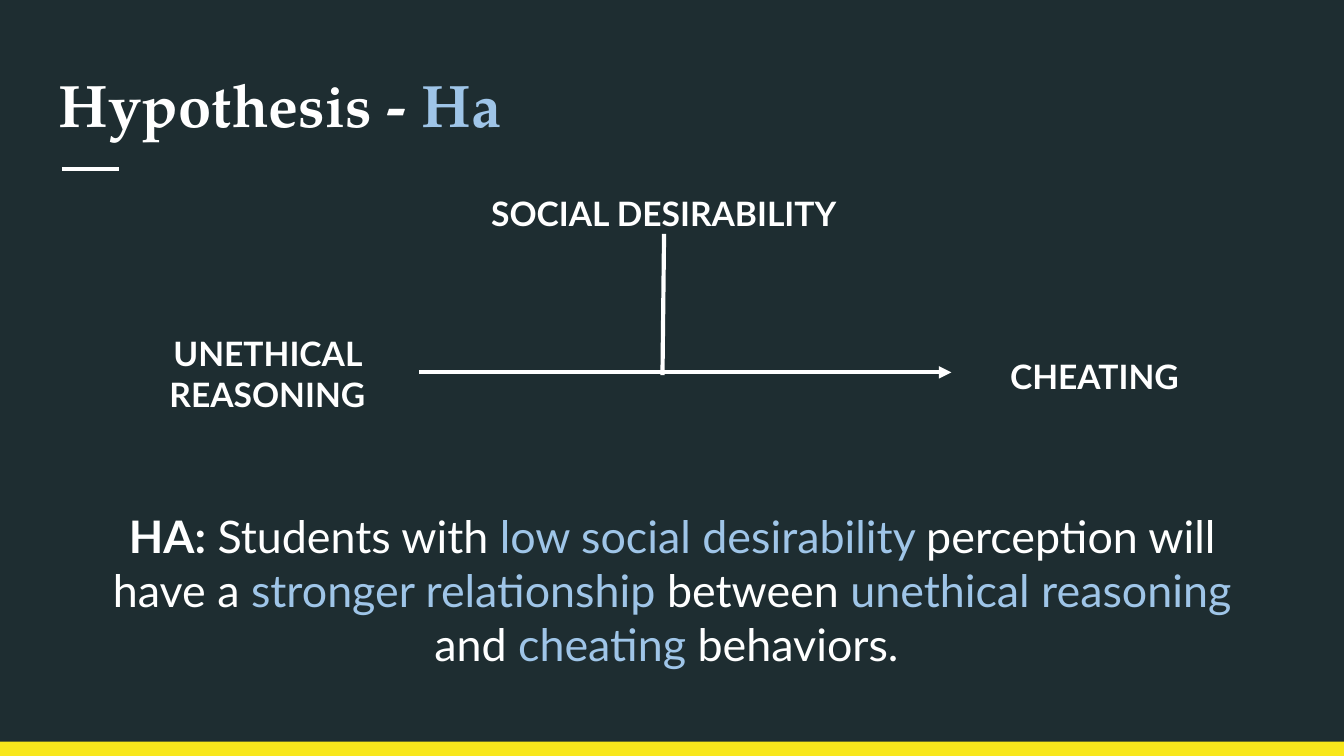
from lxml.etree import SubElement
from pptx import Presentation
from pptx.dml.color import RGBColor
from pptx.enum.shapes import MSO_CONNECTOR, MSO_SHAPE
from pptx.enum.text import PP_ALIGN
from pptx.oxml.ns import qn
from pptx.util import Cm, Pt

NIGHT, WHITE, SKY, YELLOW = "1E2D31", "FFFFFF", "9FC5E8", "F8E71C"
WIDTH, HEIGHT = 25.4, 14.29
LABEL = {"name": "Lato", "size": Pt(18), "bold": True}
STATEMENT = {"name": "Lato", "size": Pt(24), "bold": False}
HEADING = {"name": "TeX Gyre Pagella", "size": Pt(32), "bold": True}


def rgb(code):
    return RGBColor.from_string(code)


def add_text(slide, box, runs, style, **layout):
    frame = slide.shapes.add_textbox(*map(Cm, box)).text_frame
    frame.word_wrap = True
    for side in ("left", "top", "right", "bottom"):
        setattr(frame, f"margin_{side}", Cm(0.25))
    paragraph = frame.paragraphs[0]
    for key, value in layout.items():
        setattr(paragraph, key, value)
    for words, color, *changes in runs:
        run = paragraph.add_run()
        run.text = words
        for key, value in {**style, **dict(changes)}.items():
            setattr(run.font, key, value)
        run.font.color.rgb = rgb(color)


def add_line(slide, start, end, arrow=False):
    line = slide.shapes.add_connector(MSO_CONNECTOR.STRAIGHT, *map(Cm, start + end))
    line.line.color.rgb = rgb(WHITE)
    line.line.width = Pt(2.25)
    properties = line._element.spPr
    if arrow:
        SubElement(properties.find(qn("a:ln")), qn("a:tailEnd"), type="triangle")
    SubElement(properties, qn("a:effectLst"))


def add_footer_band(slide, box):
    band = slide.shapes.add_shape(MSO_SHAPE.RECTANGLE, *map(Cm, box))
    band.shadow.inherit = False
    band.fill.solid()
    band.fill.fore_color.rgb = rgb(YELLOW)
    band.line.fill.background()


def add_heading(slide, box):
    left, top, width, height = box
    rule_left, rule_top = left + 0.31, top + 2.16
    add_line(slide, (rule_left, rule_top), (rule_left + 1.07, rule_top))
    add_text(slide, box, [("Hypothesis - ", WHITE), ("Ha", SKY)], HEADING)


def add_moderation_diagram(slide, box):
    left, top, width, height = box
    effect_width, label_height = 5.41, 1.14
    effect_left = left + width - effect_width
    arrow_top = top + 3.76
    stem = left + 10.7
    labels = [
        ("SOCIAL DESIRABILITY", (left + 5.43, top, 10.57, label_height),
         {"line_spacing": 1.15, "space_after": Pt(16)}),
        ("UNETHICAL REASONING", (left, top + 2.77, 6.45, height - 2.77), {}),
        ("CHEATING", (effect_left, top + 3.2, effect_width, label_height), {}),
    ]
    for words, place, spacing in labels:
        add_text(slide, place, [(words, WHITE)], LABEL,
                 alignment=PP_ALIGN.CENTER, **spacing)
    add_line(slide, (left + 6.09, arrow_top), (effect_left, arrow_top), arrow=True)
    add_line(slide, (stem + 0.02, top + label_height), (stem - 0.01, arrow_top + 0.05))


def add_hypothesis(slide, box):
    runs = [
        ("HA:", WHITE, ("bold", True)),
        (" Students with ", WHITE),
        ("low social desirability ", SKY),
        ("perception will have a ", WHITE),
        ("stronger relationship", SKY),
        (" between ", WHITE),
        ("unethical reasoning", SKY),
        (" and ", WHITE),
        ("cheating", SKY),
        (" behaviors. ", WHITE),
    ]
    add_text(slide, box, runs, STATEMENT, alignment=PP_ALIGN.CENTER)


def main():
    deck = Presentation()
    deck.slide_width, deck.slide_height = Cm(WIDTH), Cm(HEIGHT)
    slide = deck.slides.add_slide(deck.slide_layouts[6])
    slide.background.fill.solid()
    slide.background.fill.fore_color.rgb = rgb(NIGHT)
    add_footer_band(slide, (0, HEIGHT - 0.27, WIDTH, 0.27))
    add_heading(slide, (0.86, 1.04, 23.67, 1.8))
    add_moderation_diagram(slide, (1.83, 3.28, 21.56, 4.75))
    add_hypothesis(slide, (1.68, 9.37, 22.05, 2.18))
    deck.save("out.pptx")


if __name__ == "__main__":
    main()
